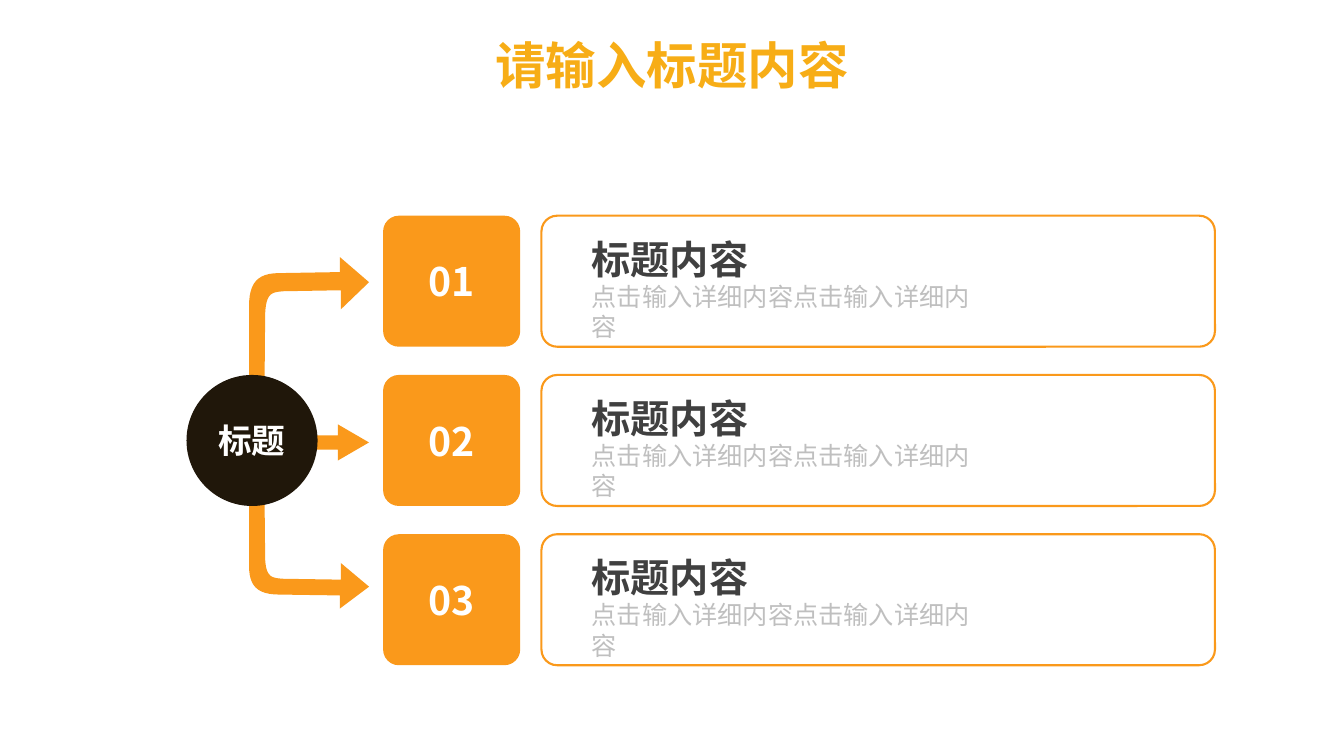
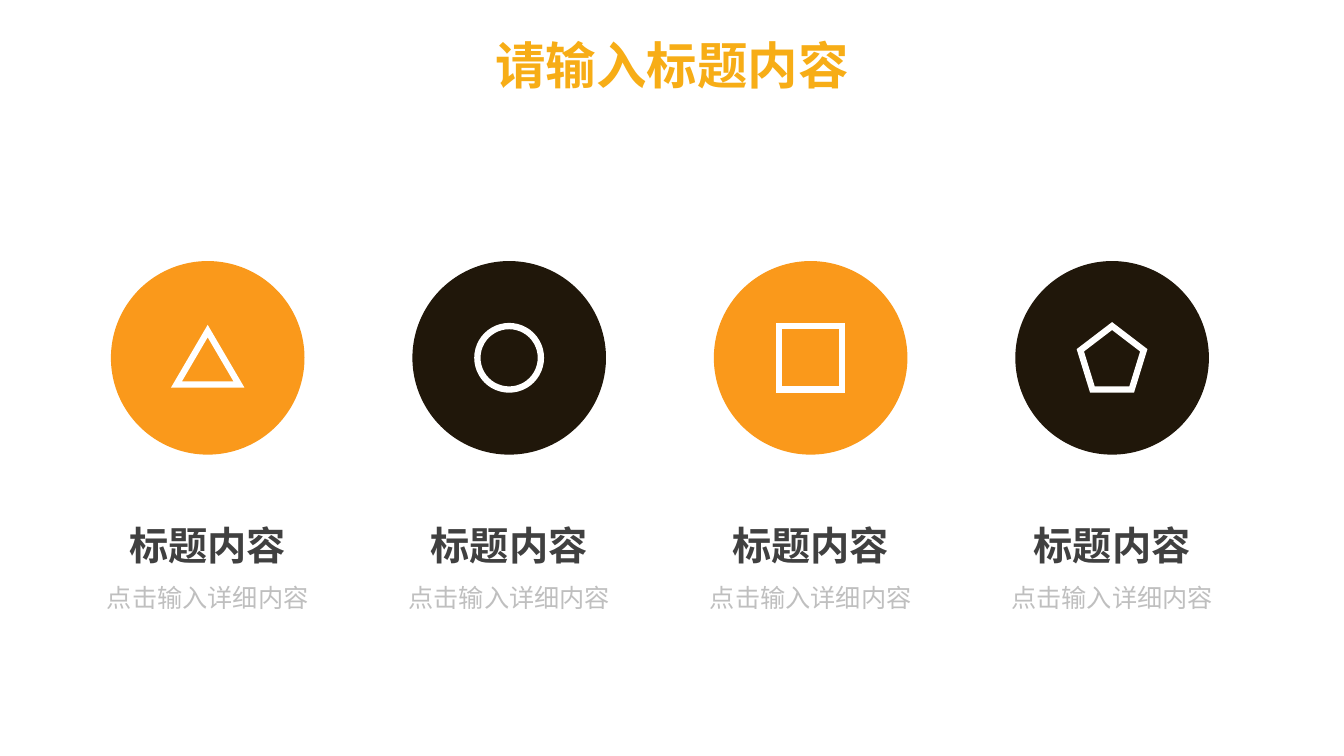
import pptx
import pptx.util
import pptx.dml.color
import pptx.enum.shapes
import pptx.enum.text
import pptx.oxml.ns
import lxml.etree

SLIDE_SIZE = (13.33, 7.5)
FONT = "Noto Sans CJK SC"
ORANGE, DARK, WHITE = "FA991B", "20170A", "FFFFFF"
GOLD, HEADING_GREY, DETAIL_GREY = "F7AD16", "404040", "BFBFBF"
TITLE_BOX = (4.74, 0.28, 3.85, 0.71)
ROW_TOP, ROW_PITCH, ROW_HEIGHT = 2.14, 1.58, 1.3
TILE_LEFT, TILE_WIDTH = 3.8, 1.36
CARD_LEFT, CARD_WIDTH = 5.37, 6.68
HUB_LEFT, ARROW_TIP = 1.85, 3.66
COLUMN_LEFT, COLUMN_PITCH, DISC_SIZE = 1.1, 2.99, 1.92
DISC_TOP = 2.59
HEADING, DETAIL = "标题内容", "点击输入详细内容"

Shape = pptx.enum.shapes.MSO_SHAPE
Align = pptx.enum.text.PP_ALIGN
Anchor = pptx.enum.text.MSO_ANCHOR


def inches(*lengths):
    return [pptx.util.Inches(length) for length in lengths]


def color(hex_code):
    return pptx.dml.color.RGBColor.from_string(hex_code)


def write(shape, text, size, hex_code, bold=True, align=Align.CENTER):
    frame = shape.text_frame
    frame.text = text
    frame.word_wrap = True
    frame.auto_size = pptx.enum.text.MSO_AUTO_SIZE.NONE
    frame.vertical_anchor = Anchor.MIDDLE
    paragraph = frame.paragraphs[0]
    paragraph.alignment = align
    for run in paragraph.runs:
        font = run.font
        font.name, font.size, font.bold = FONT, pptx.util.Pt(size), bold
        font.color.rgb = color(hex_code)
        east_asian = lxml.etree.SubElement(
            run._r.get_or_add_rPr(), pptx.oxml.ns.qn("a:ea"))
        east_asian.set("typeface", FONT)


def paint(shape, hex_code):
    shape.shadow.inherit = False
    shape.fill.solid()
    shape.fill.fore_color.rgb = color(hex_code)
    shape.line.fill.background()


def solid(shapes, preset, box, hex_code, adjustments=()):
    shape = shapes.add_shape(preset, *inches(*box))
    paint(shape, hex_code)
    for index, value in enumerate(adjustments):
        shape.adjustments[index] = value
    return shape


def outline(shapes, preset, box, hex_code, width):
    shape = shapes.add_shape(preset, *inches(*box))
    shape.shadow.inherit = False
    shape.fill.background()
    shape.line.color.rgb = color(hex_code)
    shape.line.width = pptx.util.Pt(width)
    miter = lxml.etree.SubElement(
        shape.line._get_or_add_ln(), pptx.oxml.ns.qn("a:miter"))
    miter.set("lim", "800000")
    return shape


def label(shapes, box, text, size, hex_code, bold, align):
    write(shapes.add_textbox(*inches(*box)), text, size, hex_code, bold, align)


def curve(start, first, second, end, steps=12):
    points = []
    for step in range(1, steps + 1):
        t = step / steps
        weights = ((1 - t) ** 3, 3 * t * (1 - t) ** 2, 3 * t * t * (1 - t), t ** 3)
        points.append(tuple(
            sum(w * p[axis] for w, p in zip(weights, (start, first, second, end)))
            for axis in (0, 1)))
    return points


def branch_arrow(shapes, tip_y, stretch):
    inner = ((-1.03, 0.31), (-1.02, 0.1), (-0.96, 0.1), (-0.85, 0.09))
    outer = ((-0.89, -0.09), (-1.11, -0.09), (-1.19, 0.01), (-1.19, 0.24))
    points = [(-1.04, 1.45), inner[0], *curve(*inner), (-0.28, 0.08),
              (-0.28, 0.27), (0, 0), (-0.29, -0.25), (-0.29, -0.1),
              outer[0], *curve(*outer), (-1.19, 1.45)]
    placed = [inches(ARROW_TIP + x, tip_y + stretch * y) for x, y in points]
    builder = shapes.build_freeform(*placed[0])
    builder.add_line_segments(placed[1:])
    paint(builder.convert_to_shape(), ORANGE)


def titled_slide(deck):
    slide = deck.slides.add_slide(deck.slide_layouts.get_by_name("Title Only"))
    title = slide.shapes.title
    title.left, title.top, title.width, title.height = inches(*TITLE_BOX)
    write(title, "请输入标题内容", 36, GOLD)
    return slide


def hub(shapes):
    branch_arrow(shapes, 5.82, -0.87)
    branch_arrow(shapes, 2.8, 1)
    solid(shapes, Shape.RIGHT_ARROW, (2.25, 4.21, ARROW_TIP - 2.25, 0.36),
          ORANGE, (0.39, 0.86))
    center = solid(shapes, Shape.OVAL,
                   (HUB_LEFT, ROW_TOP + ROW_PITCH, ROW_HEIGHT, ROW_HEIGHT), DARK)
    write(center, "标题", 24, WHITE)


def numbered_row(shapes, row):
    top = ROW_TOP + row * ROW_PITCH
    tile = solid(shapes, Shape.ROUNDED_RECTANGLE,
                 (TILE_LEFT, top, TILE_WIDTH, ROW_HEIGHT), ORANGE, (0.12,))
    write(tile, f"{row + 1:02}", 28, WHITE)
    card = shapes.add_group_shape().shapes
    frame = outline(card, Shape.ROUNDED_RECTANGLE,
                    (CARD_LEFT, top, CARD_WIDTH, ROW_HEIGHT), ORANGE, 1.5)
    frame.adjustments[0] = 0.12
    text_left = CARD_LEFT + 0.4
    label(card, (text_left, top + 0.14, 2.9, 0.57),
          HEADING, 28, HEADING_GREY, True, Align.LEFT)
    label(card, (text_left, top + 0.75, 4.18, 0.4),
          DETAIL * 2, 18, DETAIL_GREY, False, Align.LEFT)


def icon_column(shapes, column, icon, width, height):
    left = COLUMN_LEFT + column * COLUMN_PITCH
    middle = left + DISC_SIZE / 2
    badge = shapes.add_group_shape().shapes
    solid(badge, Shape.OVAL, (left, DISC_TOP, DISC_SIZE, DISC_SIZE),
          (ORANGE, DARK)[column % 2])
    outline(badge, icon, (middle - width / 2, DISC_TOP + (DISC_SIZE - height) / 2,
                          width, height), WHITE, 4.5)
    caption = shapes.add_group_shape().shapes
    label(caption, (middle - 0.94, 5.12, 1.88, 0.57),
          HEADING, 28, HEADING_GREY, True, Align.CENTER)
    label(caption, (middle - 1.11, 5.73, 2.22, 0.4),
          DETAIL, 18, DETAIL_GREY, False, Align.CENTER)


def main():
    deck = pptx.Presentation()
    deck.slide_width, deck.slide_height = inches(*SLIDE_SIZE)

    branches = titled_slide(deck).shapes
    hub(branches)
    for row in range(3):
        numbered_row(branches, row)

    icons = ((Shape.ISOSCELES_TRIANGLE, 0.62, 0.53), (Shape.OVAL, 0.63, 0.63),
             (Shape.RECTANGLE, 0.63, 0.63), (Shape.REGULAR_PENTAGON, 0.63, 0.63))
    columns = titled_slide(deck).shapes
    for column, icon in enumerate(icons):
        icon_column(columns, column, *icon)

    deck.save("out.pptx")


if __name__ == "__main__":
    main()
